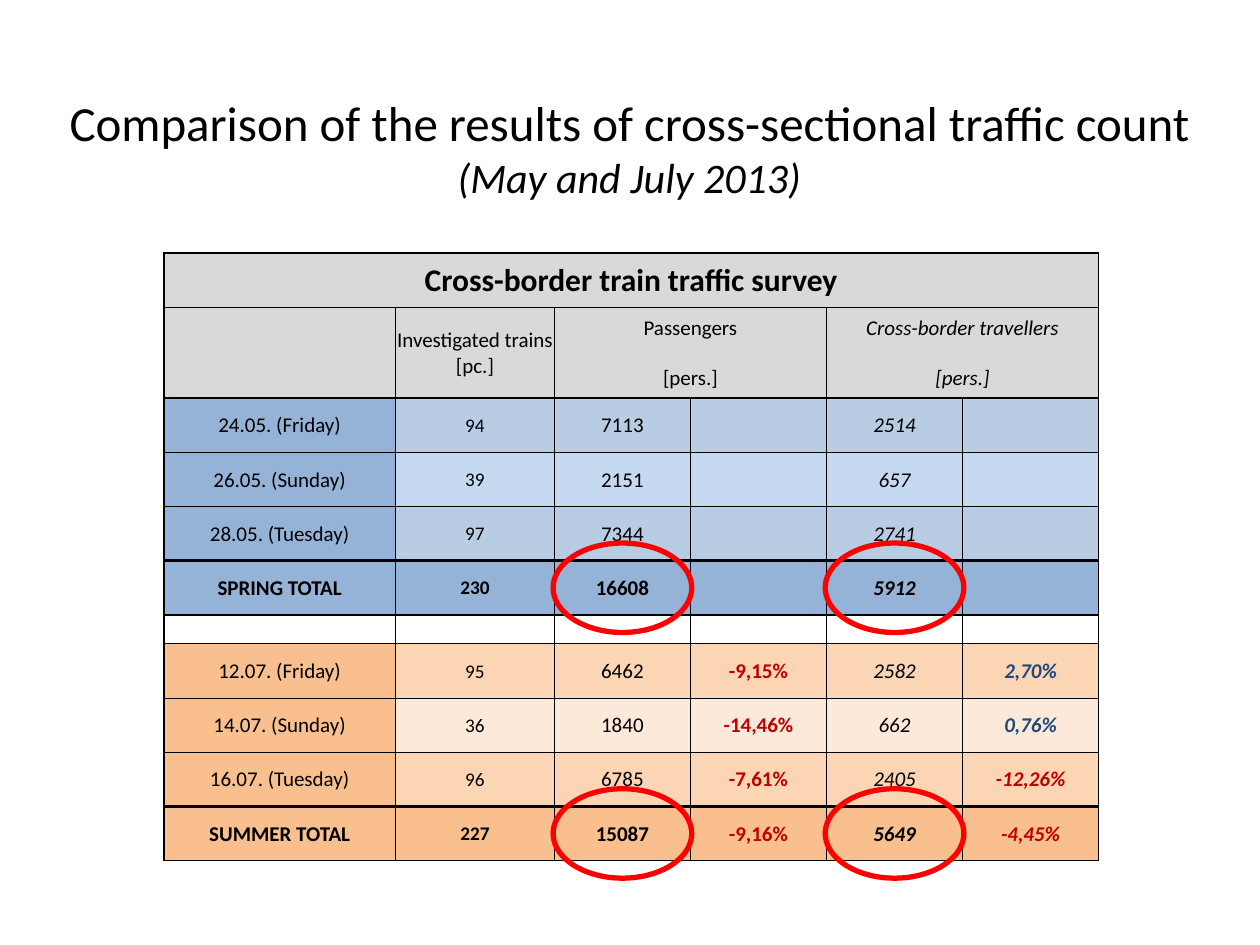
import dataclasses
import itertools

import pptx
import pptx.dml.color
import pptx.enum.shapes
import pptx.enum.text
import pptx.oxml.ns
import pptx.util
from lxml import etree


@dataclasses.dataclass(frozen=True)
class Theme:
    """Colours, type sizes and line widths of the slide."""
    font: str = "Calibri"
    ink: str = "000000"
    header: str = "D9D9D9"
    blank: str = "FFFFFF"
    fall: str = "C00000"
    rise: str = "1F497D"
    ring: str = "FF0000"
    title_size: int = 28
    subtitle_size: int = 24
    heading_size: int = 18
    body_size: int = 12
    count_size: int = 11
    ring_width: int = 3


@dataclasses.dataclass(frozen=True)
class Season:
    """Fills of one season: label and total, odd days, even days."""
    strong: str
    medium: str
    light: str


THEME = Theme()
SPRING = Season("95B3D7", "B8CCE4", "C5D9F1")
SUMMER = Season("FABF8F", "FCD5B4", "FDE9D9")
SLIDE_SIZE = (10, 7.5)
TABLE_LEFT, TABLE_TOP = 1.3, 2.01
COLUMNS = [1.84, 1.26] + [1.08] * 4
ROWS = [0.43, 0.72] + [0.43] * 4 + [0.23] + [0.43] * 4
ROW_LINES = [1, 1, 1, 0.5, 0.5, 2, 1, 1, 0.5, 0.5, 2, 1]
SPRING_ROW, GAP_ROW, SUMMER_ROW = 2, 6, 7
TOTAL_ROWS, RINGED_COLUMNS = (5, 10), (2, 4)
RING_SIZE = (1.1, 0.71)

SPRING_COUNTS = [
    ("24.05. (Friday)", "94", "7113", "", "2514", ""),
    ("26.05. (Sunday)", "39", "2151", "", "657", ""),
    ("28.05. (Tuesday)", "97", "7344", "", "2741", ""),
    ("SPRING TOTAL", "230", "16608", "", "5912", ""),
]
SUMMER_COUNTS = [
    ("12.07. (Friday)", "95", "6462", "-9,15%", "2582", "2,70%"),
    ("14.07. (Sunday)", "36", "1840", "-14,46%", "662", "0,76%"),
    ("16.07. (Tuesday)", "96", "6785", "-7,61%", "2405", "-12,26%"),
    ("SUMMER TOTAL", "227", "15087", "-9,16%", "5649", "-4,45%"),
]


def rgb(value):
    """Turn a hex string into a colour."""
    return pptx.dml.color.RGBColor.from_string(value)


def write(paragraph, text, size=THEME.body_size, color=THEME.ink,
          bold=False, italic=False, space_before=0):
    """Put formatted, centred text into a paragraph."""
    paragraph.alignment = pptx.enum.text.PP_ALIGN.CENTER
    paragraph.space_before = pptx.util.Pt(space_before)
    run = paragraph.add_run()
    run.text = text
    run.font.name = THEME.font
    run.font.size = pptx.util.Pt(size)
    run.font.color.rgb = rgb(color)
    run.font.bold = bold
    run.font.italic = italic


def add_title(slide):
    """Place the two-line title across the slide."""
    title = slide.shapes.title
    width, height = SLIDE_SIZE
    title.left = pptx.util.Inches(0.035 * width)
    title.top = pptx.util.Inches(0.084 * height)
    title.width = pptx.util.Inches(0.929 * width)
    title.height = pptx.util.Inches(0.143 * height)
    frame = title.text_frame
    frame.auto_size = pptx.enum.text.MSO_AUTO_SIZE.NONE
    frame.vertical_anchor = pptx.enum.text.MSO_ANCHOR.MIDDLE
    write(frame.paragraphs[0], "Comparison of the results of cross-sectional traffic count",
          size=THEME.title_size)
    write(frame.add_paragraph(), "(May and July 2013)", size=THEME.subtitle_size, italic=True)


def add_border(cell, side, width):
    """Draw one border of a cell."""
    properties = cell._tc.get_or_add_tcPr()
    line = etree.SubElement(properties, pptx.oxml.ns.qn(f"a:ln{side}"),
                            w=str(int(pptx.util.Pt(width))))
    fill = etree.SubElement(line, pptx.oxml.ns.qn("a:solidFill"))
    etree.SubElement(fill, pptx.oxml.ns.qn("a:srgbClr"), val=THEME.ink)


def format_cell(cell, row, fill):
    """Set borders, margins and fill of a cell in the given row."""
    for side, width in zip("LRTB", (1, 1, ROW_LINES[row], ROW_LINES[row + 1])):
        add_border(cell, side, width)
    cell.margin_left = cell.margin_top = cell.margin_right = pptx.util.Inches(0.01)
    cell.margin_bottom = 0
    cell.vertical_anchor = pptx.enum.text.MSO_ANCHOR.MIDDLE
    cell.fill.solid()
    cell.fill.fore_color.rgb = rgb(fill)


def fill_cell(cell, text, **style):
    """Write text into a cell, or keep an empty cell small."""
    paragraph = cell.text_frame.paragraphs[0]
    if text:
        write(paragraph, text, **style)
    else:
        etree.SubElement(paragraph._p, pptx.oxml.ns.qn("a:endParaRPr"),
                         sz=str(THEME.count_size * 100))


def add_table(slide):
    """Add the empty table grid."""
    frame = slide.shapes.add_table(
        len(ROWS), len(COLUMNS),
        *(pptx.util.Inches(length)
          for length in (TABLE_LEFT, TABLE_TOP, sum(COLUMNS), sum(ROWS))))
    table = frame.table
    table.first_row = table.horz_banding = False
    for column, width in zip(table.columns, COLUMNS):
        column.width = pptx.util.Inches(width)
    for row, height in zip(table.rows, ROWS):
        row.height = pptx.util.Inches(height)
    return table


def fill_header(table):
    """Fill the table heading and the column headings."""
    for row, column in itertools.product(range(2), range(len(COLUMNS))):
        format_cell(table.cell(row, column), row, THEME.header)
    for row, first, last in ((0, 0, 5), (1, 2, 3), (1, 4, 5)):
        table.cell(row, first).merge(table.cell(row, last))
    fill_cell(table.cell(0, 0), "Cross-border train traffic survey",
              size=THEME.heading_size, bold=True)
    fill_cell(table.cell(1, 0), "")
    headings = ((1, "Investigated trains", "[pc.]", 0),
                (2, "Passengers", "[pers.]", 1.2 * THEME.body_size),
                (4, "Cross-border travellers", "[pers.]", 1.2 * THEME.body_size))
    for column, heading, unit, gap in headings:
        cell = table.cell(1, column)
        fill_cell(cell, heading, italic=column == 4)
        write(cell.text_frame.add_paragraph(), unit, italic=column == 4, space_before=gap)


def fill_season(table, first_row, counts, season):
    """Fill the day rows and the total row of one season."""
    for index, values in enumerate(counts):
        row = first_row + index
        total = row in TOTAL_ROWS
        body = season.strong if total else (season.medium, season.light)[index % 2]
        for column, text in enumerate(values):
            change = column in (3, 5)
            color = THEME.ink
            if change:
                color = THEME.fall if text.startswith("-") else THEME.rise
            cell = table.cell(row, column)
            format_cell(cell, row, body if column else season.strong)
            fill_cell(cell, text, color=color, bold=total or change, italic=column >= 4,
                      size=THEME.count_size if column == 1 else THEME.body_size)


def fill_gap(table):
    """Leave a white row between the seasons."""
    for column in range(len(COLUMNS)):
        cell = table.cell(GAP_ROW, column)
        format_cell(cell, GAP_ROW, THEME.blank)
        fill_cell(cell, "")


def add_ring(slide, row, column):
    """Ring the table cell at the given row and column."""
    width, height = RING_SIZE
    left = TABLE_LEFT + sum(COLUMNS[:column]) + (COLUMNS[column] - width) / 2
    top = TABLE_TOP + sum(ROWS[:row]) + (ROWS[row] - height) / 2
    ring = slide.shapes.add_shape(
        pptx.enum.shapes.MSO_SHAPE.OVAL,
        *(pptx.util.Inches(length) for length in (left, top, width, height)))
    ring.shadow.inherit = False
    ring.fill.background()
    ring.line.color.rgb = rgb(THEME.ring)
    ring.line.width = pptx.util.Pt(THEME.ring_width)


def main():
    """Build and save the slide."""
    presentation = pptx.Presentation()
    presentation.slide_width, presentation.slide_height = map(pptx.util.Inches, SLIDE_SIZE)
    slide = presentation.slides.add_slide(presentation.slide_layouts[5])
    add_title(slide)
    table = add_table(slide)
    fill_header(table)
    fill_season(table, SPRING_ROW, SPRING_COUNTS, SPRING)
    fill_gap(table)
    fill_season(table, SUMMER_ROW, SUMMER_COUNTS, SUMMER)
    for row, column in itertools.product(TOTAL_ROWS, RINGED_COLUMNS):
        add_ring(slide, row, column)
    presentation.save("out.pptx")


if __name__ == "__main__":
    main()
